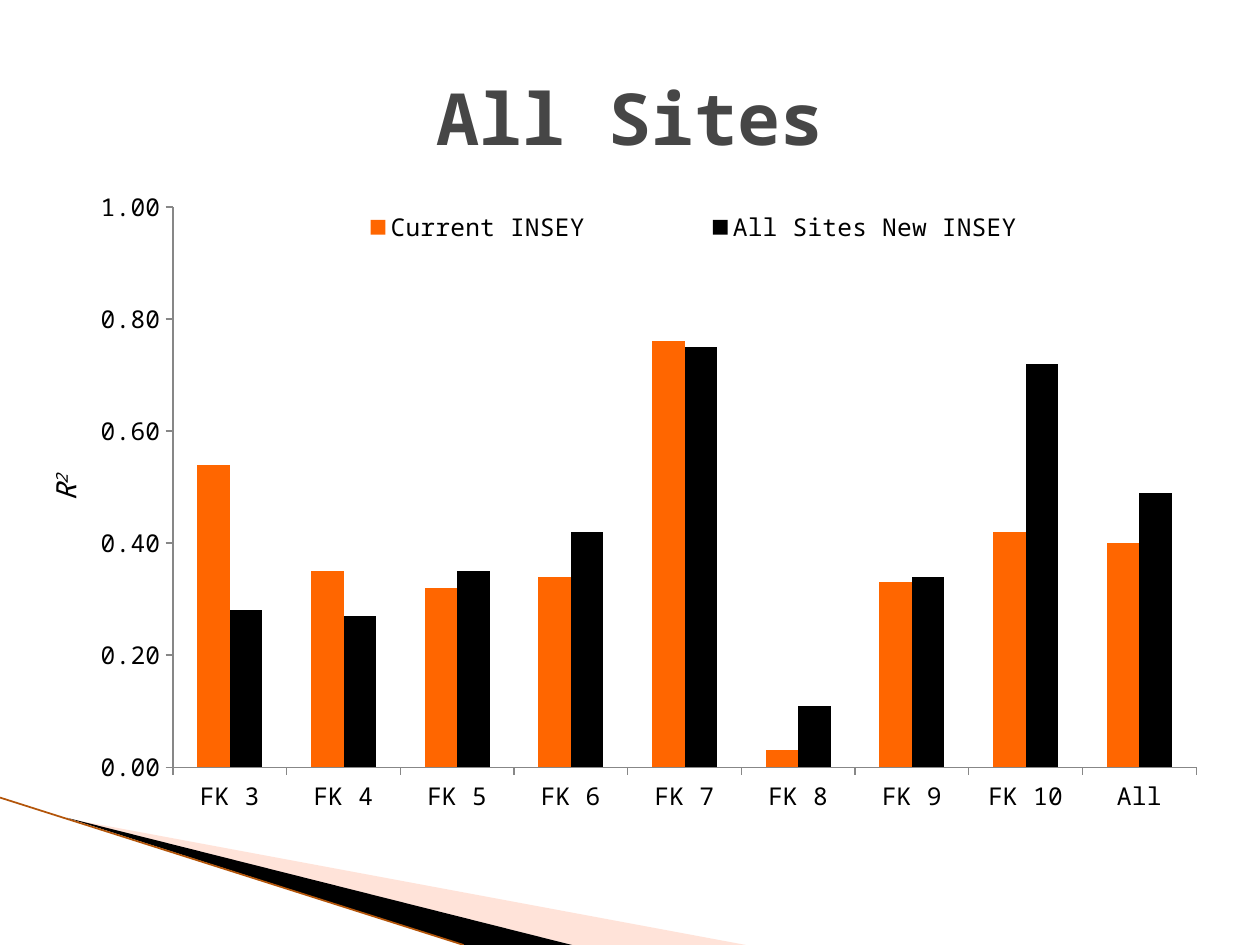
from lxml.etree import SubElement
from pptx import Presentation
from pptx.chart.data import CategoryChartData
from pptx.dml.color import RGBColor
from pptx.enum.chart import XL_CHART_TYPE, XL_LEGEND_POSITION, XL_TICK_MARK
from pptx.enum.shapes import MSO_CONNECTOR
from pptx.enum.text import MSO_ANCHOR, PP_ALIGN
from pptx.oxml import parse_xml
from pptx.oxml.ns import nsdecls, qn
from pptx.util import Inches, Pt

FONT = "Noto Sans Mono"
BLACK = RGBColor(0x00, 0x00, 0x00)
ORANGE = RGBColor(0xFF, 0x66, 0x00)
PEACH = RGBColor(0xFF, 0xBA, 0xA2)
RUST = RGBColor(0xB3, 0x55, 0x0A)
TITLE_GREY = RGBColor(0x46, 0x46, 0x46)
AXIS_GREY = RGBColor(0x87, 0x87, 0x87)

SITES = ["FK 3", "FK 4", "FK 5", "FK 6", "FK 7", "FK 8", "FK 9", "FK 10", "All"]
SERIES = [
    ("Current INSEY", ORANGE,
     [0.54, 0.35, 0.32, 0.34, 0.76, 0.03, 0.33, 0.42, 0.40]),
    ("All Sites New INSEY", BLACK,
     [0.28, 0.27, 0.35, 0.42, 0.75, 0.11, 0.34, 0.72, 0.49]),
]


def inches(*lengths):
    return [Inches(length) for length in lengths]


def style_font(font, size, color, bold=False, italic=False):
    font.name = FONT
    font.size = Pt(size)
    font.color.rgb = color
    font.bold = bold
    font.italic = italic


def add_wedge(page, points, color, opacity=None):
    corners = [inches(*point) for point in points]
    builder = page.shapes.build_freeform(*corners[0], scale=1.0)
    builder.add_line_segments(corners[1:], close=True)
    wedge = builder.convert_to_shape()
    wedge.shadow.inherit = False
    wedge.fill.solid()
    wedge.fill.fore_color.rgb = color
    wedge.line.fill.background()
    if opacity is not None:
        tint = wedge.fill._xPr.find(".//" + qn("a:srgbClr"))
        SubElement(tint, qn("a:alpha")).set("val", str(opacity * 1000))


def add_edge(page, start, end):
    edge = page.shapes.add_connector(
        MSO_CONNECTOR.STRAIGHT, *inches(*start), *inches(*end))
    edge.line.color.rgb = RUST
    edge.line.width = Pt(1)
    SubElement(edge._element.spPr, qn("a:effectLst"))


def set_title(page, text):
    title = page.shapes.title
    title.left, title.top, title.width, title.height = inches(0.5, 0.3, 9, 1.25)
    frame = title.text_frame
    frame.vertical_anchor = MSO_ANCHOR.MIDDLE
    para = frame.paragraphs[0]
    para.alignment = PP_ALIGN.CENTER
    span = para.add_run()
    span.text = text
    style_font(span.font, 41, TITLE_GREY, bold=True)


def place(element, x, y, width, height, inner=False):
    """Put a chart part at shares of the chart's size."""
    target = '<c:layoutTarget val="inner"/>' if inner else ""
    shares = "".join(f'<c:{tag} val="{share}"/>' for tag, share in
                     zip("xywh", (x, y, width, height)))
    layout = parse_xml(
        f'<c:layout {nsdecls("c")}><c:manualLayout>{target}'
        f'<c:xMode val="edge"/><c:yMode val="edge"/>{shares}'
        '</c:manualLayout></c:layout>')
    for old in element.findall(qn("c:layout")):
        element.remove(old)
    element.insert(0 if inner else 1, layout)


def style_axis(axis):
    axis.has_major_gridlines = False
    axis.major_tick_mark = XL_TICK_MARK.OUTSIDE
    axis.format.line.color.rgb = AXIS_GREY
    style_font(axis.tick_labels.font, 14, BLACK)


def add_site_chart(page):
    data = CategoryChartData(number_format="0.00")
    data.categories = SITES
    for name, _, values in SERIES:
        data.add_series(name, values)
    chart = page.shapes.add_chart(
        XL_CHART_TYPE.COLUMN_CLUSTERED, *inches(0.42, 1.33, 9.25, 5.92), data).chart
    chart.has_title = False
    style_font(chart.font, 18, BLACK)

    # Columns
    plot = chart.plots[0]
    plot.gap_width = 150
    plot.overlap = 0
    plot.vary_by_categories = False
    for series, (_, color, _) in zip(plot.series, SERIES):
        series.format.fill.solid()
        series.format.fill.fore_color.rgb = color

    # Axes
    style_axis(chart.category_axis)
    scale = chart.value_axis
    style_axis(scale)
    scale.minimum_scale, scale.maximum_scale, scale.major_unit = 0, 1, 0.2
    scale.tick_labels.number_format = "#,##0.00"
    scale.tick_labels.number_format_is_linked = False

    # Legend in one row across the top of the plot
    chart.has_legend = True
    legend = chart.legend
    legend.position = XL_LEGEND_POSITION.RIGHT
    legend.include_in_layout = True
    style_font(legend.font, 14, BLACK)
    place(legend._element, 0.17, 0.05, 0.76, 0.06)
    place(chart._chartSpace.chart.plotArea, 0.103, 0.053, 0.878, 0.751, inner=True)


def add_axis_label(page):
    box = page.shapes.add_textbox(*inches(-1.77, 3.69, 4.58, 0.37))
    box.rotation = 270
    box.text_frame.word_wrap = True
    para = box.text_frame.paragraphs[0]
    para.alignment = PP_ALIGN.CENTER
    for text, baseline in (("R", 0), ("2", 30)):
        span = para.add_run()
        span.text = text
        style_font(span.font, 16, BLACK, italic=True)
        if baseline:
            span._r.get_or_add_rPr().set("baseline", str(baseline * 1000))


def main():
    deck = Presentation()
    deck.slide_width, deck.slide_height = inches(10, 7.5)
    page = deck.slides.add_slide(deck.slide_layouts[5])

    # Swoosh in the lower left corner
    add_wedge(page, [(0.55, 6.5), (5.92, 7.5), (4.54, 7.5)], PEACH, opacity=40)
    add_wedge(page, [(0.53, 6.49), (4.54, 7.5), (3.68, 7.5)], BLACK)
    add_edge(page, (0, 6.33), (3.68, 7.5))

    # Content
    add_site_chart(page)
    set_title(page, "All Sites")
    add_axis_label(page)
    deck.save("out.pptx")


if __name__ == "__main__":
    main()
